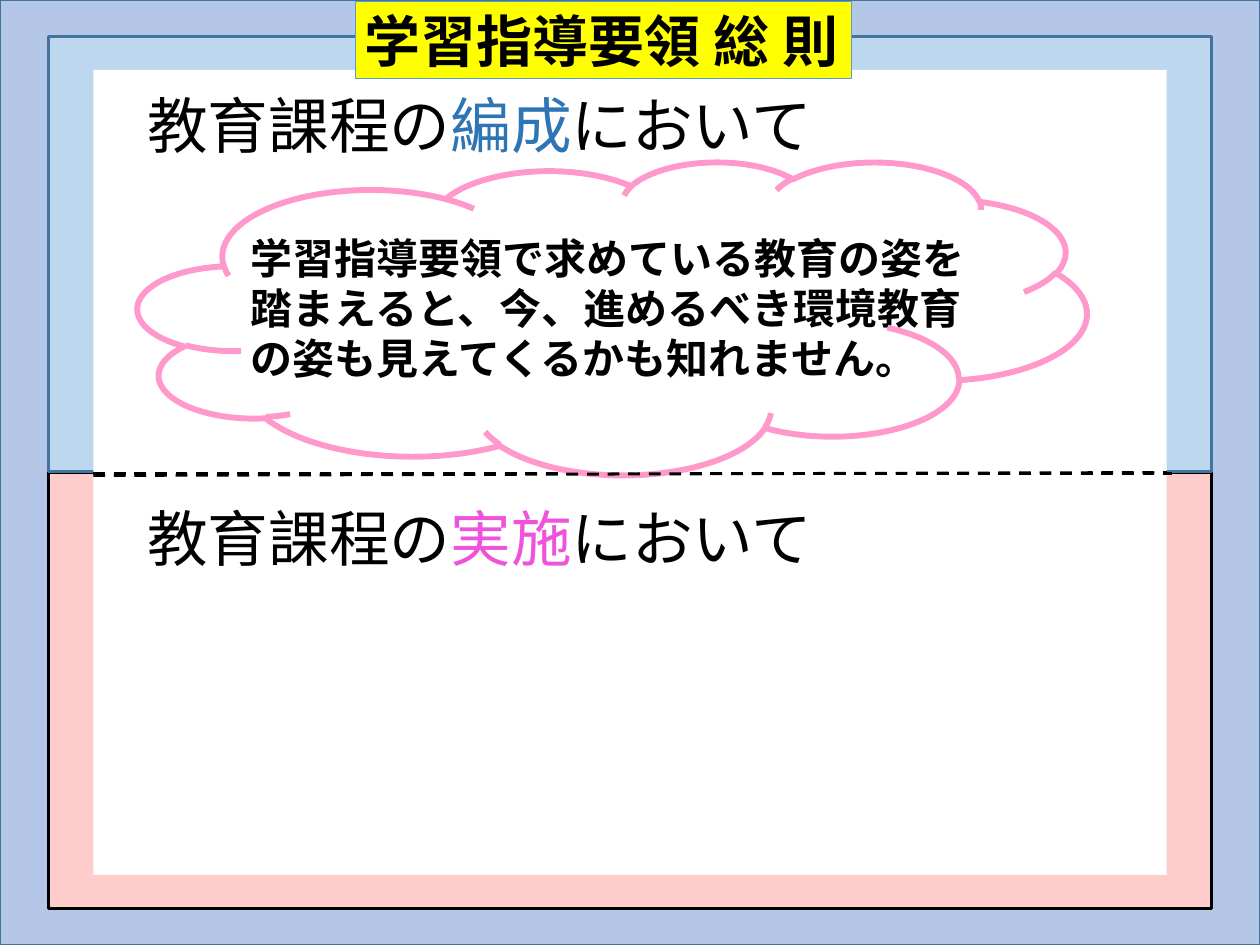
from pptx import Presentation
from pptx.dml.color import RGBColor
from pptx.enum.dml import MSO_LINE
from pptx.enum.shapes import MSO_CONNECTOR, MSO_SHAPE
from pptx.enum.text import MSO_ANCHOR, MSO_AUTO_SIZE, PP_ALIGN
from pptx.oxml.xmlchemy import OxmlElement
from pptx.util import Cm, Pt

COLORS = {
    "background": "B4C7E7", "planning": "BDD7EE", "practice": "FFCCCC",
    "paper": "FFFFFF", "title": "FFFF00", "title_line": "5B9BD5",
    "outline": "43739E", "ink": "000000", "blue": "2E75B6",
    "pink": "EF53DC", "cloud": "FF99CC",
}
FONT = "Noto Sans CJK JP"
HEADING = {"name": FONT, "size": Pt(46.2), "bold": False}
TITLE = {"name": "Calibri", "size": Pt(42.7), "bold": True}
MESSAGE = {"name": FONT, "size": Pt(32), "bold": True}


def color(name):
    """Return the named colour."""
    return RGBColor.from_string(COLORS[name])


def paint(shape, fill=None, line=None, width=1):
    """Give a shape its fill and outline, leaving out what is not named."""
    if fill:
        shape.fill.solid()
        shape.fill.fore_color.rgb = color(fill)
    else:
        shape.fill.background()
    if line:
        shape.line.color.rgb = color(line)
        shape.line.width = Pt(width)
    else:
        shape.line.fill.background()


def write(shape, parts, font_format, **frame_format):
    """Write coloured runs as one left-aligned paragraph."""
    frame = shape.text_frame
    frame.auto_size = MSO_AUTO_SIZE.NONE
    for name, value in frame_format.items():
        setattr(frame, name, value)
    paragraph = frame.paragraphs[0]
    paragraph.alignment = PP_ALIGN.LEFT
    for text, ink in parts:
        run = paragraph.add_run()
        run.text = text
        for name, value in font_format.items():
            setattr(run.font, name, value)
        run.font.color.rgb = color(ink)
        east_asian = OxmlElement("a:ea")
        east_asian.set("typeface", FONT)
        run.font._rPr.append(east_asian)
    return paragraph


def add_panel(slide, box, **style):
    """Add a plain rectangle filling the box."""
    shape = slide.shapes.add_shape(MSO_SHAPE.RECTANGLE, *map(Cm, box))
    shape.shadow.inherit = False
    paint(shape, **style)


def add_heading(slide, box, topic, ink):
    """Add a section heading with its topic in colour."""
    shape = slide.shapes.add_textbox(*map(Cm, box))
    parts = [("教育課程の", "ink"), (topic, ink), ("において", "ink")]
    write(shape, parts, HEADING, word_wrap=False).line_spacing = Pt(56)


def add_divider(slide, start, end):
    """Add a dashed line between two points."""
    line = slide.shapes.add_connector(MSO_CONNECTOR.STRAIGHT, *map(Cm, start + end))
    line.line.color.rgb = color("ink")
    line.line.width = Pt(2.25)
    line.line.dash_style = MSO_LINE.DASH
    line._element.spPr.append(OxmlElement("a:effectLst"))


def add_cloud(slide, box, message):
    """Add a cloud outline with a message inside it."""
    left, top, width, height = box
    text_box = (left + 2.77, top + 1.8, 20.12, 4.34)
    shape = slide.shapes.add_textbox(*map(Cm, text_box))
    write(shape, [(message, "ink")], MESSAGE, word_wrap=True).line_spacing = Pt(38)
    cloud = slide.shapes.add_shape(MSO_SHAPE.CLOUD, *map(Cm, (left, top, width, height)))
    cloud.shadow.inherit = False
    paint(cloud, line="cloud", width=4.5)


def add_title(slide, box, text):
    """Place the title on its yellow label, in front of the panels."""
    title = slide.shapes.title
    title.left, title.top, title.width, title.height = map(Cm, box)
    paint(title, "title", "title_line", 0.75)
    write(title, [(text, "ink")], TITLE, word_wrap=False,
          vertical_anchor=MSO_ANCHOR.MIDDLE)
    title.element.getparent().append(title.element)


def main():
    """Build the slide and save it."""
    presentation = Presentation()
    presentation.slide_width, presentation.slide_height = Cm(33.87), Cm(25.4)
    slide = presentation.slides.add_slide(presentation.slide_layouts[5])
    add_panel(slide, (0, 0, 33.87, 25.4), fill="background", line="outline")
    add_panel(slide, (1.3, 12.7, 31.27, 11.71), fill="practice", line="ink", width=2.25)
    add_panel(slide, (1.3, 0.97, 31.27, 11.71), fill="planning", line="outline", width=2.25)
    add_panel(slide, (2.51, 1.88, 28.85, 21.64), fill="paper")
    for top, topic, ink in [(2.21, "編成", "blue"), (13.31, "実施", "pink")]:
        add_heading(slide, (3.71, top, 18.59, 2.3), topic, ink)
    add_title(slide, (9.55, 0.03, 13.34, 2.08), "学習指導要領 総 則")
    add_divider(slide, (2.51, 12.73), (31.5, 12.73))
    add_cloud(slide, (3.71, 4.34, 25.5, 8.41),
              "学習指導要領で求めている教育の姿を踏まえると、今、進めるべき環境教育の姿も見えてくるかも知れません。")
    add_divider(slide, (2.51, 12.78), (31.37, 12.7))
    presentation.save("out.pptx")


if __name__ == "__main__":
    main()
